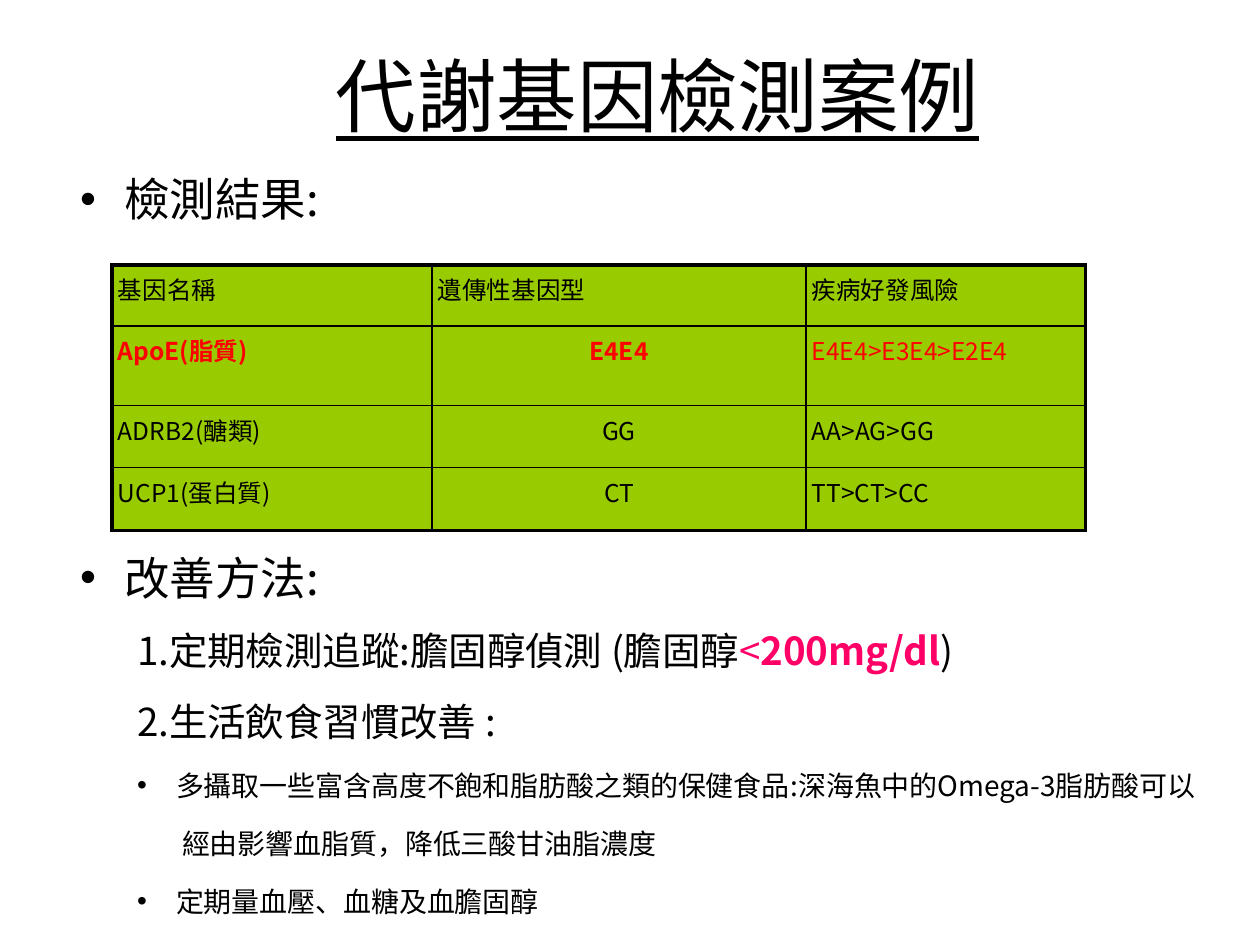
from dataclasses import dataclass

import lxml.etree
import pptx
import pptx.dml.color
import pptx.enum.text
import pptx.oxml.ns
import pptx.util

EMU_PER_PX = 914400 / 126
FONT_NAME = "Noto Sans CJK SC"
BLACK = pptx.dml.color.RGBColor(0, 0, 0)
RED = pptx.dml.color.RGBColor(255, 0, 0)
PINK = pptx.dml.color.RGBColor(255, 0, 102)
GREEN = pptx.dml.color.RGBColor(153, 204, 0)
CENTER = pptx.enum.text.PP_ALIGN.CENTER
LEFT = pptx.enum.text.PP_ALIGN.LEFT
MARGIN = 6
OUTER_BORDER, INNER_BORDER = 2, 0.75


@dataclass(frozen=True)
class Run:
    text: str
    color: pptx.dml.color.RGBColor = BLACK
    bold: bool = False
    underline: bool = False


@dataclass(frozen=True)
class Line:
    runs: tuple[Run, ...]
    size: int
    alignment: pptx.enum.text.PP_ALIGN = LEFT
    space_before: int = 0
    indent: int = 0
    bullet: bool = False


@dataclass(frozen=True)
class TextBlock:
    left: int
    top: int
    width: int
    height: int
    lines: tuple[Line, ...]


def px(length: int) -> pptx.util.Emu:
    return pptx.util.Emu(round(length * EMU_PER_PX))


def set_attributes(target, values: dict) -> None:
    for name, value in values.items():
        setattr(target, name, value)


def add_element(parent, tag: str, **attributes: str):
    return lxml.etree.SubElement(parent, pptx.oxml.ns.qn(tag), attributes)


def write_line(paragraph, line: Line) -> None:
    properties = paragraph._p.get_or_add_pPr()
    if line.indent:
        properties.set("marL", str(px(line.indent)))
    if line.bullet:
        properties.set("indent", str(px(-line.indent)))
        color = add_element(properties, "a:buClr")
        add_element(color, "a:srgbClr", val=str(BLACK))
        add_element(properties, "a:buFont", typeface="Arial")
        add_element(properties, "a:buChar", char="•")
    set_attributes(paragraph, {
        "alignment": line.alignment,
        "space_before": pptx.util.Pt(line.space_before),
    })
    for part in line.runs:
        run = paragraph.add_run()
        run.text = part.text
        set_attributes(run.font, {
            "name": FONT_NAME,
            "size": pptx.util.Pt(line.size),
            "bold": part.bold,
            "underline": part.underline,
        })
        run.font.color.rgb = part.color
        add_element(run._r.get_or_add_rPr(), "a:ea", typeface=FONT_NAME)


def margins() -> dict:
    return {f"margin_{side}": px(MARGIN) for side in ("left", "top", "right", "bottom")}


def add_text_block(slide, block: TextBlock) -> None:
    shape = slide.shapes.add_textbox(
        px(block.left), px(block.top), px(block.width), px(block.height))
    frame = shape.text_frame
    set_attributes(frame, {"word_wrap": True, **margins()})
    for index, line in enumerate(block.lines):
        write_line(frame.add_paragraph() if index else frame.paragraphs[0], line)


def set_borders(cell, widths: dict[str, float]) -> None:
    properties = cell._tc.get_or_add_tcPr()
    for position, (tag, width) in enumerate(widths.items()):
        border = add_element(properties, tag, w=str(pptx.util.Pt(width)))
        fill = add_element(border, "a:solidFill")
        add_element(fill, "a:srgbClr", val=str(BLACK))
        properties.insert(position, border)


def add_gene_table(slide, left: int, top: int, columns: tuple[int, ...],
                   rows: tuple[int, ...], lines: list[list[Line]]) -> None:
    table = slide.shapes.add_table(
        len(rows), len(columns), px(left), px(top), px(sum(columns)), px(sum(rows))).table
    set_attributes(table, {"first_row": False, "horz_banding": False})
    for column, width in zip(table.columns, columns):
        column.width = px(width)
    for row, height in zip(table.rows, rows):
        row.height = px(height)
    for row_index, row_lines in enumerate(lines):
        for column_index, line in enumerate(row_lines):
            cell = table.cell(row_index, column_index)
            set_attributes(cell, margins())
            cell.fill.solid()
            cell.fill.fore_color.rgb = GREEN
            outer_sides = {
                "a:lnL": column_index == 0,
                "a:lnR": column_index == len(columns) - 1,
                "a:lnT": row_index == 0,
                "a:lnB": row_index == len(rows) - 1,
            }
            set_borders(cell, {tag: OUTER_BORDER if outer else INNER_BORDER
                               for tag, outer in outer_sides.items()})
            write_line(cell.text_frame.paragraphs[0], line)


def heading(top: int, text: str) -> TextBlock:
    return TextBlock(74, top, 1042, 68, (Line((Run(text),), 26, indent=44, bullet=True),))


def gene_line(row: int, column: int, text: str) -> Line:
    highlighted = row == 1
    run = Run(text, RED if highlighted else BLACK, bold=highlighted and column < 2)
    return Line((run,), 14, CENTER if row and column == 1 else LEFT)


GENES = (
    ("基因名稱", "遺傳性基因型", "疾病好發風險"),
    ("ApoE(脂質)", "E4E4", "E4E4>E3E4>E2E4"),
    ("ADRB2(醣類)", "GG", "AA>AG>GG"),
    ("UCP1(蛋白質)", "CT", "TT>CT>CC"),
)
TITLE = TextBlock(134, 40, 1047, 98, (
    Line((Run("代謝基因檢測案例", underline=True),), 46, CENTER),))
ADVICE = TextBlock(131, 621, 1206, 331, (
    Line((Run("1.定期檢測追蹤:膽固醇偵測 (膽固醇"), Run("<", PINK),
          Run("200mg/dl", PINK, bold=True), Run(")")), 22),
    Line((Run("2.生活飲食習慣改善 :"),), 22, space_before=14),
    Line((Run("多攝取一些富含高度不飽和脂肪酸之類的保健食品:深海魚中的Omega-3脂肪酸可以"),),
         16, space_before=14, indent=39, bullet=True),
    Line((Run("經由影響血脂質，降低三酸甘油脂濃度"),), 16, space_before=14, indent=45),
    Line((Run("定期量血壓、血糖及血膽固醇"),), 16, space_before=14, indent=39, bullet=True),
))


def main() -> None:
    presentation = pptx.Presentation()
    set_attributes(presentation, {"slide_width": px(1260), "slide_height": px(945)})
    slide = presentation.slides.add_slide(presentation.slide_layouts[6])
    for block in (heading(165, "檢測結果:"), heading(544, "改善方法:"), ADVICE, TITLE):
        add_text_block(slide, block)
    lines = [[gene_line(row, column, text) for column, text in enumerate(texts)]
             for row, texts in enumerate(GENES)]
    add_gene_table(slide, 112, 265, (320, 374, 280), (61, 80, 62, 63), lines)
    presentation.save("out.pptx")


if __name__ == "__main__":
    main()
